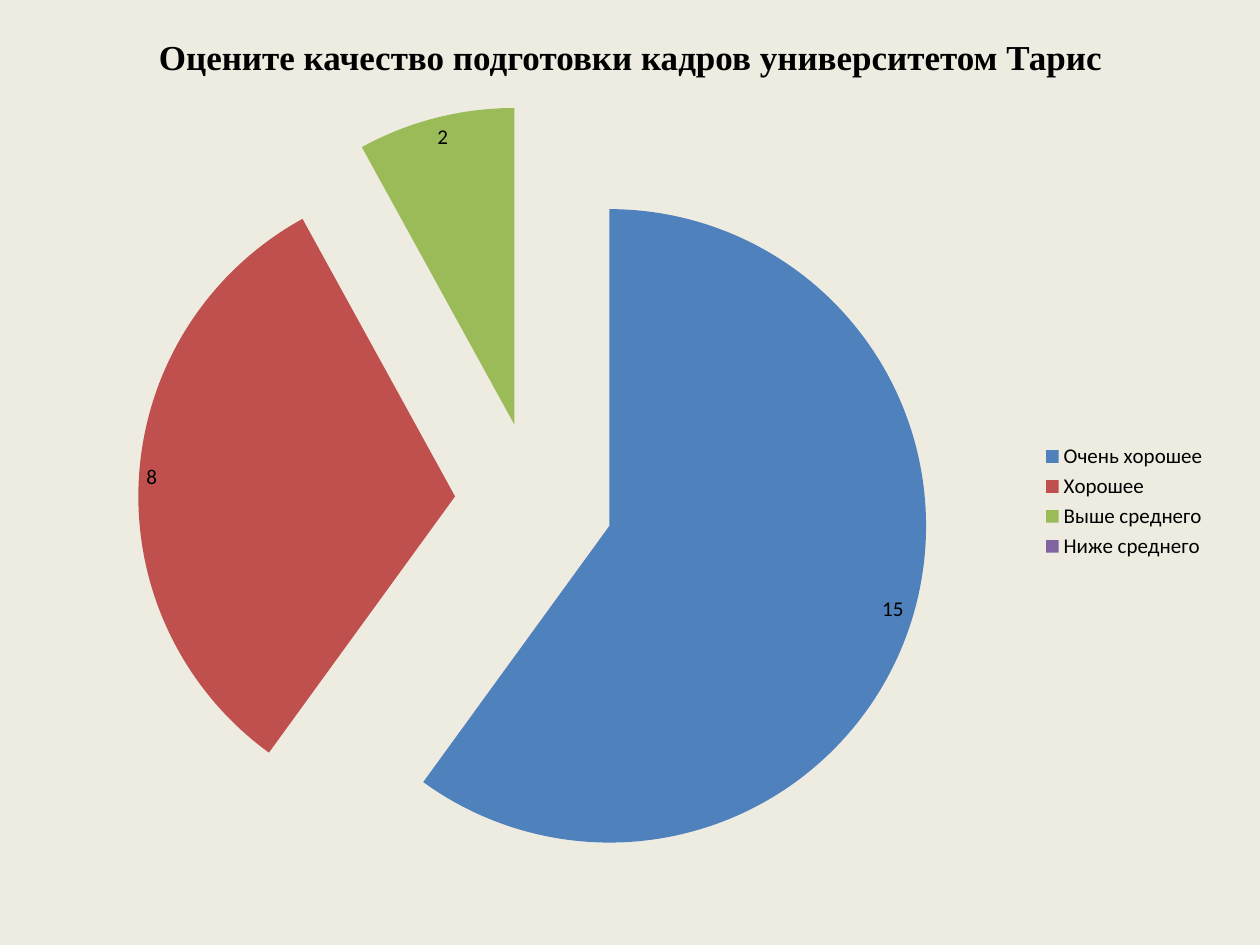
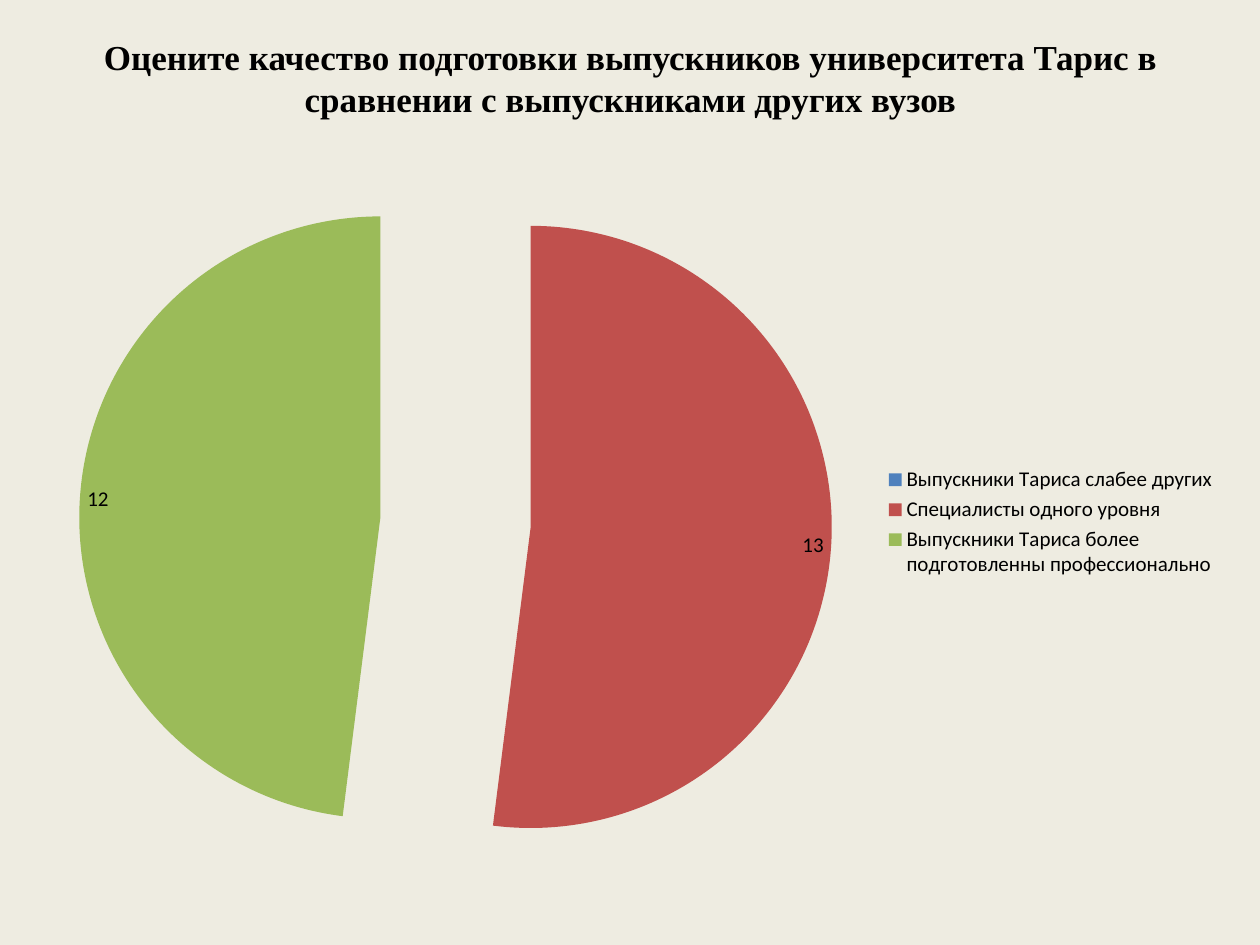
from pptx import Presentation
from pptx.chart.data import CategoryChartData
from pptx.dml.color import RGBColor
from pptx.enum.chart import XL_CHART_TYPE, XL_LABEL_POSITION, XL_LEGEND_POSITION
from pptx.enum.text import MSO_ANCHOR, MSO_AUTO_SIZE, PP_ALIGN
from pptx.util import Inches, Pt

EXPLODED_PIE = XL_CHART_TYPE.PIE_EXPLODED
INSIDE_END = XL_LABEL_POSITION.INSIDE_END
RIGHT = XL_LEGEND_POSITION.RIGHT
TOP, CENTER, NO_FIT = MSO_ANCHOR.TOP, PP_ALIGN.CENTER, MSO_AUTO_SIZE.NONE

# Content
SURVEY = [
    {
        "question": "Оцените качество подготовки кадров университетом Тарис",
        "title_height": 0.44,
        "chart_box": (0.23, 0.7, 9.45, 6.56),
        "answers": [
            ("Очень хорошее", 15),
            ("Хорошее ", 8),
            ("Выше среднего", 2),
            ("Ниже среднего", 0),
        ],
    },
    {
        "question": "Оцените качество подготовки выпускников университета Тарис "
                    "в сравнении с выпускниками других вузов",
        "title_height": 0.77,
        "chart_box": (0.23, 1.02, 9.53, 6.25),
        "answers": [
            ("Выпускники Тариса слабее других", 0),
            ("Специалисты одного уровня", 13),
            ("Выпускники Тариса более подготовленны профессионально", 12),
        ],
    },
]

# Shared style
COLORS = {"background": "EEECE1", "text": "000000"}
SLICE_COLORS = ["4F81BD", "C0504D", "9BBB59", "8064A2"]
TITLE_FONT, CHART_FONT = "Times New Roman", "Calibri"
TITLE_LEFT, TITLE_TOP, TITLE_WIDTH = 0.16, 0.23, 9.69
HIDE_ZEROS = "0;;"


def style_font(font, name, size, bold=False):
    font.name, font.size, font.bold = name, Pt(size), bold
    font.color.rgb = RGBColor.from_string(COLORS["text"])


def write_title(page, question, height):
    title = page.shapes.title
    title.left, title.top = Inches(TITLE_LEFT), Inches(TITLE_TOP)
    title.width, title.height = Inches(TITLE_WIDTH), Inches(height)
    frame = title.text_frame
    frame.text = question
    frame.word_wrap, frame.auto_size = True, NO_FIT
    frame.vertical_anchor = TOP
    para = frame.paragraphs[0]
    para.alignment = CENTER
    style_font(para.runs[0].font, TITLE_FONT, 20, bold=True)


def add_answer_pie(page, answers, chart_box):
    names, counts = zip(*answers)
    data = CategoryChartData()
    data.categories = names
    data.add_series("Series 1", counts)
    box = [Inches(length) for length in chart_box]
    chart = page.shapes.add_chart(EXPLODED_PIE, *box, data).chart
    chart.has_title = False
    style_font(chart.font, CHART_FONT, 12)

    # Legend
    chart.has_legend = True
    chart.legend.position = RIGHT
    chart.legend.include_in_layout = False
    style_font(chart.legend.font, CHART_FONT, 12)

    # Slices and their values
    plot = chart.plots[0]
    plot.vary_by_categories = True
    for index, color in enumerate(SLICE_COLORS[:len(answers)]):
        fill = plot.series[0].points[index].format.fill
        fill.solid()
        fill.fore_color.rgb = RGBColor.from_string(color)
    plot.has_data_labels = True
    labels = plot.data_labels
    labels.show_value, labels.show_percentage = True, False
    labels.number_format, labels.number_format_is_linked = HIDE_ZEROS, False
    labels.position = INSIDE_END
    style_font(labels.font, CHART_FONT, 12)


def main():
    deck = Presentation()
    deck.slide_width, deck.slide_height = Inches(10), Inches(7.5)
    background = deck.slide_master.background.fill
    background.solid()
    background.fore_color.rgb = RGBColor.from_string(COLORS["background"])
    title_only = deck.slide_layouts.get_by_name("Title Only")

    for item in SURVEY:
        page = deck.slides.add_slide(title_only)
        write_title(page, item["question"], item["title_height"])
        add_answer_pie(page, item["answers"], item["chart_box"])

    deck.save("out.pptx")


if __name__ == "__main__":
    main()
